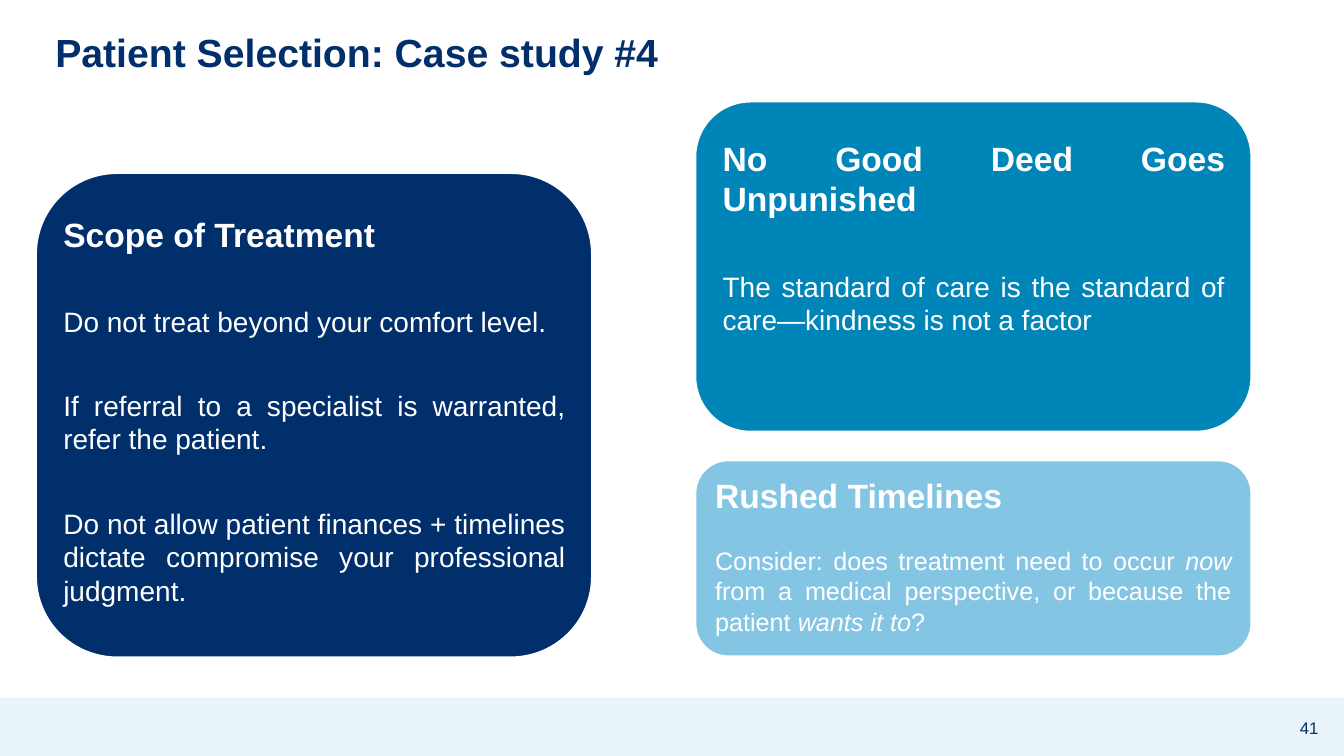
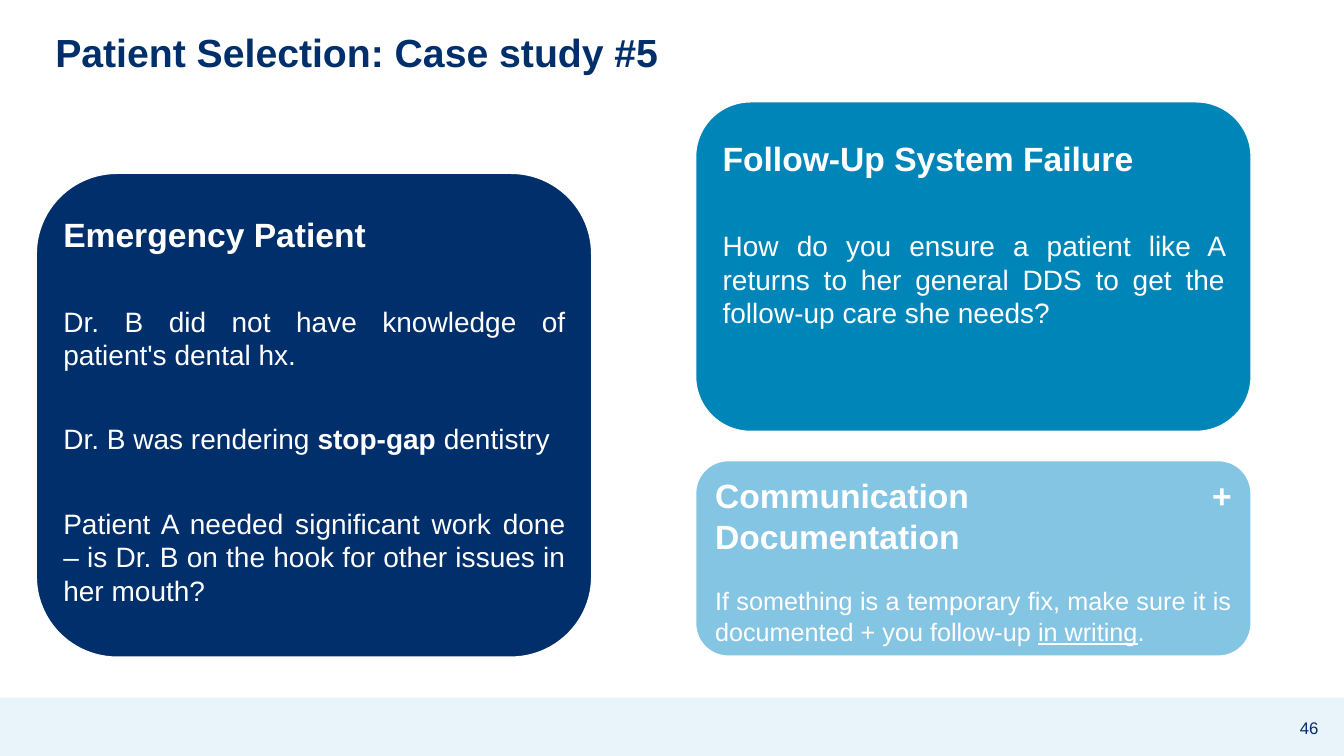
import pptx
import pptx.dml.color
import pptx.enum.shapes
import pptx.enum.text
import pptx.util

ALIGN = pptx.enum.text.PP_ALIGN
ANCHOR = pptx.enum.text.MSO_ANCHOR
SHAPE = pptx.enum.shapes.MSO_SHAPE

NAVY, TEAL, SKY, BAND, WHITE = "002F6B", "0085B8", "85C5E4", "E8F4FA", "FFFFFF"
LEFT, RIGHT, PANEL_W, INDENT = 2.7, 51.76, 41.33, 1.27

CASES = [
    dict(
        title="Patient Selection: Case study #4",
        number="41",
        main=[
            "Scope of Treatment",
            "Do not treat beyond your comfort level.",
            "If referral to a specialist is warranted, refer the patient.",
            "Do not allow patient finances + timelines dictate compromise your professional judgment.",
        ],
        upper=[
            "No Good Deed Goes Unpunished",
            "The standard of care is the standard of care—kindness is not a factor",
        ],
        lower=[
            "Rushed Timelines",
            [
                "Consider: does treatment need to occur ",
                ("now", "italic"),
                " from a medical perspective, or because the patient ",
                ("wants it to", "italic"),
                "?",
            ],
        ],
    ),
    dict(
        title="Patient Selection: Case study #5",
        number="46",
        main=[
            "Emergency Patient",
            "Dr. B did not have knowledge of patient's dental hx.",
            ["Dr. B was rendering ", ("stop-gap", "bold"), " dentistry"],
            "Patient A needed significant work done – is Dr. B on the hook for other issues in her mouth?",
        ],
        upper=[
            "Follow-Up System Failure",
            "How do you ensure a patient like A returns to her general DDS to get the follow-up care she needs?",
        ],
        lower=[
            "Communication + Documentation",
            [
                "If something is a temporary fix, make sure it is documented + you follow-up ",
                ("in writing", "underline"),
                ".",
            ],
        ],
    ),
]


def rgb(value):
    return pptx.dml.color.RGBColor.from_string(value)


class Deck:
    """Holds the shared style and the current slide; lengths are percent of the slide."""

    def __init__(self):
        self.prs = pptx.Presentation()
        self.prs.slide_width = pptx.util.Inches(13.33)
        self.prs.slide_height = pptx.util.Inches(7.5)

    def box(self, x, y, w, h):
        width, height = self.prs.slide_width, self.prs.slide_height
        return [int(share * side / 100) for share, side in zip((x, y, w, h), (width, height) * 2)]

    def new_slide(self, title, number):
        self.s = self.prs.slides.add_slide(self.prs.slide_layouts[6])
        self.shape(SHAPE.RECTANGLE, 0, 92.27, 100, 7.73, BAND)
        tf = self.text(3.38, 2, 90.7, 10.4, ANCHOR.MIDDLE)
        p = self.paragraph(tf, title, 28, NAVY, bold=True)
        p.line_spacing = 0.9
        tf = self.text(95.12, 93.6, 4.58, 5.33, ANCHOR.MIDDLE)
        self.paragraph(tf, number, 12, NAVY, ALIGN.CENTER)

    def shape(self, kind, x, y, w, h, fill, line=None):
        sp = self.s.shapes.add_shape(kind, *self.box(x, y, w, h))
        sp.shadow.inherit = False
        sp.fill.solid()
        sp.fill.fore_color.rgb = rgb(fill)
        if line:
            sp.line.color.rgb = rgb(line)
            sp.line.width = pptx.util.Pt(1)
        else:
            sp.line.fill.background()
        return sp

    def panel(self, x, y, h, fill):
        return self.shape(SHAPE.ROUNDED_RECTANGLE, x, y, PANEL_W, h, fill, WHITE)

    def text(self, x, y, w, h, anchor=ANCHOR.TOP):
        tf = self.s.shapes.add_textbox(*self.box(x, y, w, h)).text_frame
        tf.word_wrap = True
        tf.vertical_anchor = anchor
        return tf

    def paragraph(self, tf, content, size, color, align=ALIGN.LEFT, bold=False):
        p = tf.paragraphs[0] if not tf.paragraphs[0].runs else tf.add_paragraph()
        p.alignment = align
        p.font.name = "Arial"
        p.font.size = pptx.util.Pt(size)
        p.font.bold = bold
        p.font.color.rgb = rgb(color)
        for part in [content] if isinstance(content, str) else content:
            words, style = (part, None) if isinstance(part, str) else part
            r = p.add_run()
            r.text = words
            if style:
                setattr(r.font, style, True)
        return p

    def story(self, tf, content, size, gap):
        heading, *body = content
        self.paragraph(tf, heading, 24, WHITE, ALIGN.JUSTIFY, True)
        for item in body:
            p = self.paragraph(tf, item, size, WHITE, ALIGN.JUSTIFY)
            p.space_before = pptx.util.Pt(gap)

    def inset_panel(self, x, y, h, fill, text_top, text_h, content):
        self.panel(x, y, h, fill)
        tf = self.text(x + INDENT, text_top, 38.86, text_h)
        self.story(tf, content, 20, 36)

    def lower_panel(self, content):
        tf = self.panel(RIGHT, 60.93, 25.87, SKY).text_frame
        tf.word_wrap = True
        tf.vertical_anchor = ANCHOR.TOP
        self.story(tf, content, 18, 21.5)


def main():
    deck = Deck()
    for case in CASES:
        deck.new_slide(case["title"], case["number"])
        deck.inset_panel(LEFT, 22.93, 64, NAVY, 27.6, 59.47, case["main"])
        deck.inset_panel(RIGHT, 13.47, 43.6, TEAL, 17.6, 27.87, case["upper"])
        deck.lower_panel(case["lower"])
    deck.prs.save("out.pptx")


if __name__ == "__main__":
    main()
